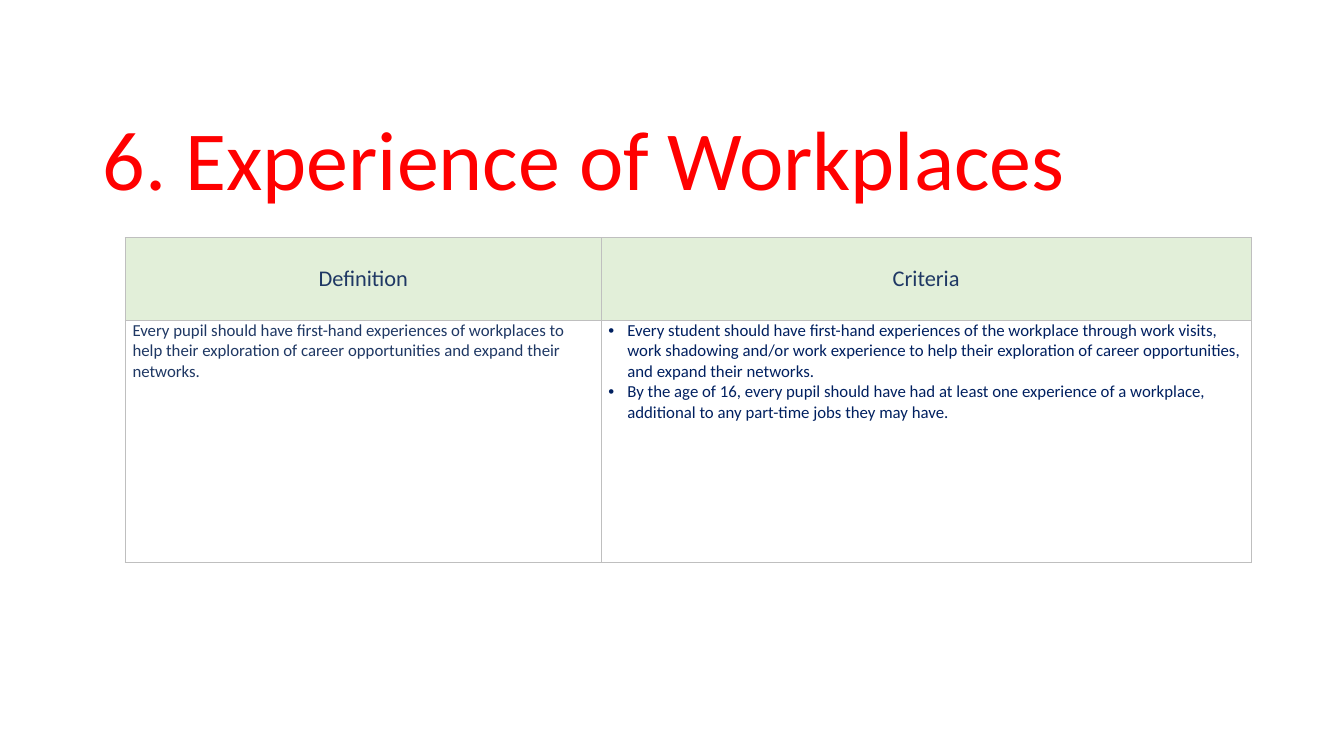
from dataclasses import dataclass

import pptx
import pptx.dml.color
import pptx.enum.text
import pptx.oxml
import pptx.oxml.ns
import pptx.util
from pptx.util import Cm, Pt

RGBColor = pptx.dml.color.RGBColor
Align = pptx.enum.text.PP_ALIGN
Anchor = pptx.enum.text.MSO_ANCHOR

RED = RGBColor(0xFF, 0x00, 0x00)
NAVY = RGBColor(0x1F, 0x38, 0x64)
DEEP_BLUE = RGBColor(0x00, 0x20, 0x60)
PALE_GREEN = RGBColor(0xE2, 0xEF, 0xD9)
GREY = RGBColor(0xBF, 0xBF, 0xBF)

FONT = "Calibri"
NS = pptx.oxml.ns.nsdecls("a")
BULLET_INDENT = Cm(0.48)
CELL_MARGIN = Cm(0.18)


@dataclass
class Column:
    heading: str
    width: float
    paragraphs: list[str]
    color: RGBColor
    bullet: bool = False


COLUMNS = [
    Column("Definition", 11.99, [
        "Every pupil should have first-hand experiences of workplaces to help their "
        "exploration of career opportunities and expand their networks.",
    ], NAVY),
    Column("Criteria", 16.38, [
        "Every student should have first-hand experiences of the workplace through work "
        "visits, work shadowing and/or work experience to help their exploration of career "
        "opportunities, and expand their networks.",
        "By the age of 16, every pupil should have had at least one experience of a "
        "workplace, additional to any part-time jobs they may have.",
    ], DEEP_BLUE, bullet=True),
]
ROW_HEIGHTS = [2.08, 6.1]


def add_bullet(p) -> None:
    pPr = p._p.get_or_add_pPr()
    pPr.set("marL", str(BULLET_INDENT))
    pPr.set("indent", str(-BULLET_INDENT))
    pPr.append(pptx.oxml.parse_xml(f'<a:buFont {NS} typeface="Arial"/>'))
    pPr.append(pptx.oxml.parse_xml(f'<a:buChar {NS} char="•"/>'))


def write(tf, paragraphs: list[str], *, size: float, color: RGBColor,
          align=Align.LEFT, spacing: float = 1.0, bullet: bool = False) -> None:
    for i, text in enumerate(paragraphs):
        p = tf.add_paragraph() if i else tf.paragraphs[0]
        p.alignment = align
        p.line_spacing = spacing
        if bullet:
            add_bullet(p)
        r = p.add_run()
        r.text = text
        r.font.name = FONT
        r.font.size = Pt(size)
        r.font.color.rgb = color


def format_cell(cell, anchor) -> None:
    """Set the margins, anchor and grey border; call before setting the fill."""
    cell.margin_left = cell.margin_right = CELL_MARGIN
    cell.margin_top = cell.margin_bottom = 0
    cell.vertical_anchor = anchor
    tcPr = cell._tc.get_or_add_tcPr()
    for side in "LRTB":
        tcPr.append(pptx.oxml.parse_xml(
            f'<a:ln{side} {NS} w="{Pt(1)}"><a:solidFill><a:srgbClr val="{GREY}"/>'
            f'</a:solidFill></a:ln{side}>'))


def add_title(slide, text: str) -> None:
    sp = slide.shapes.add_textbox(Cm(2.34), Cm(1.32), Cm(29.21), Cm(4.06))
    tf = sp.text_frame
    tf.word_wrap = True
    tf.vertical_anchor = Anchor.BOTTOM
    write(tf, [text], size=60, color=RED, spacing=0.9)


def add_criteria_table(slide) -> None:
    width = sum(column.width for column in COLUMNS)
    table = slide.shapes.add_table(len(ROW_HEIGHTS), len(COLUMNS), Cm(3.16), Cm(5.99),
                                   Cm(width), Cm(sum(ROW_HEIGHTS))).table
    table.first_row = table.horz_banding = False
    for row, height in zip(table.rows, ROW_HEIGHTS):
        row.height = Cm(height)
    for i, column in enumerate(COLUMNS):
        table.columns[i].width = Cm(column.width)
        head, body = table.cell(0, i), table.cell(1, i)
        format_cell(head, Anchor.MIDDLE)
        head.fill.solid()
        head.fill.fore_color.rgb = PALE_GREEN
        write(head.text_frame, [column.heading], size=16, color=NAVY, align=Align.CENTER)
        format_cell(body, Anchor.TOP)
        body.fill.background()
        write(body.text_frame, column.paragraphs, size=12, color=column.color,
              bullet=column.bullet)


def main() -> None:
    prs = pptx.Presentation()
    prs.slide_width, prs.slide_height = Cm(33.87), Cm(19.05)
    slide = prs.slides.add_slide(prs.slide_layouts[6])
    add_title(slide, "6. Experience of Workplaces")
    add_criteria_table(slide)
    prs.save("out.pptx")


if __name__ == "__main__":
    main()
